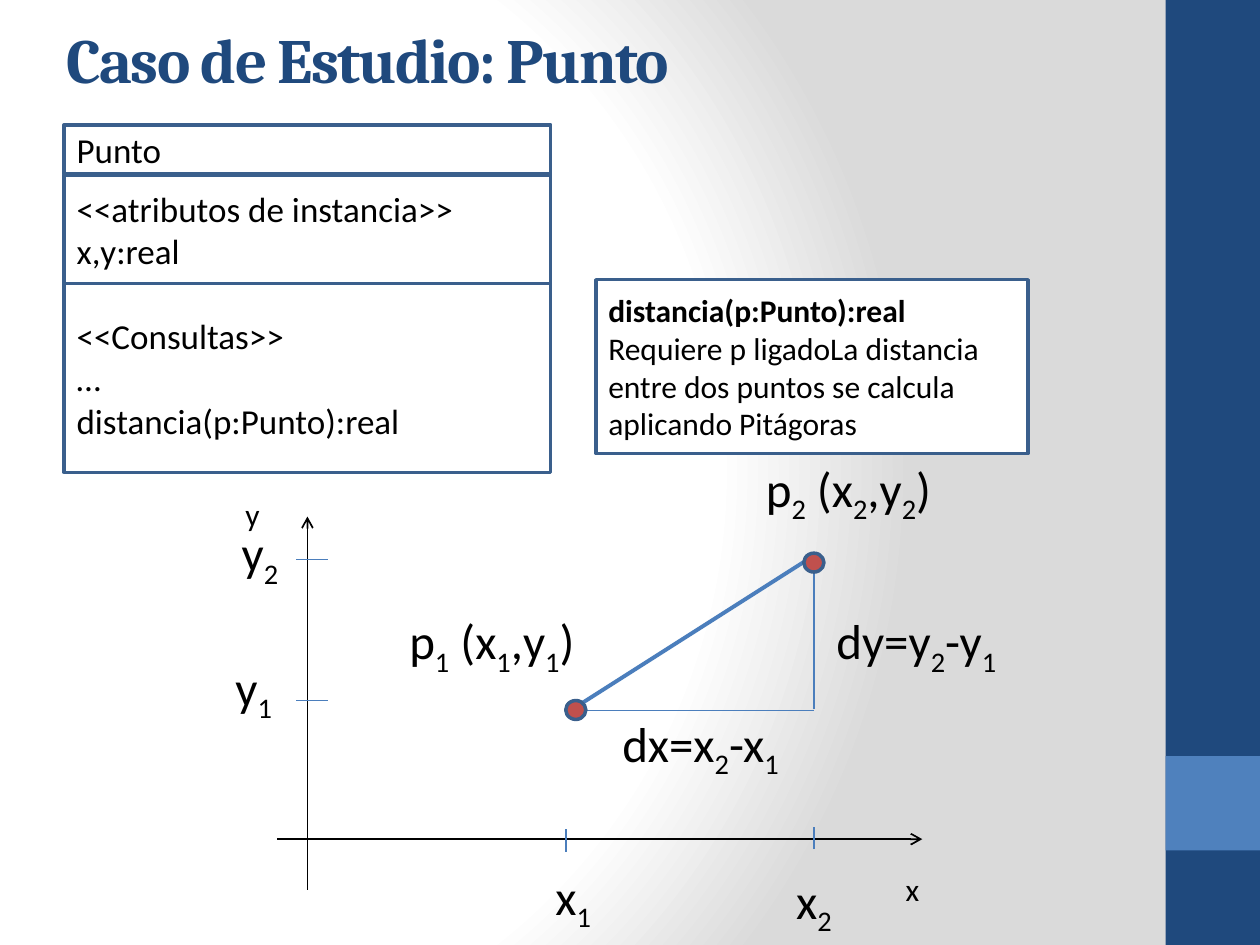
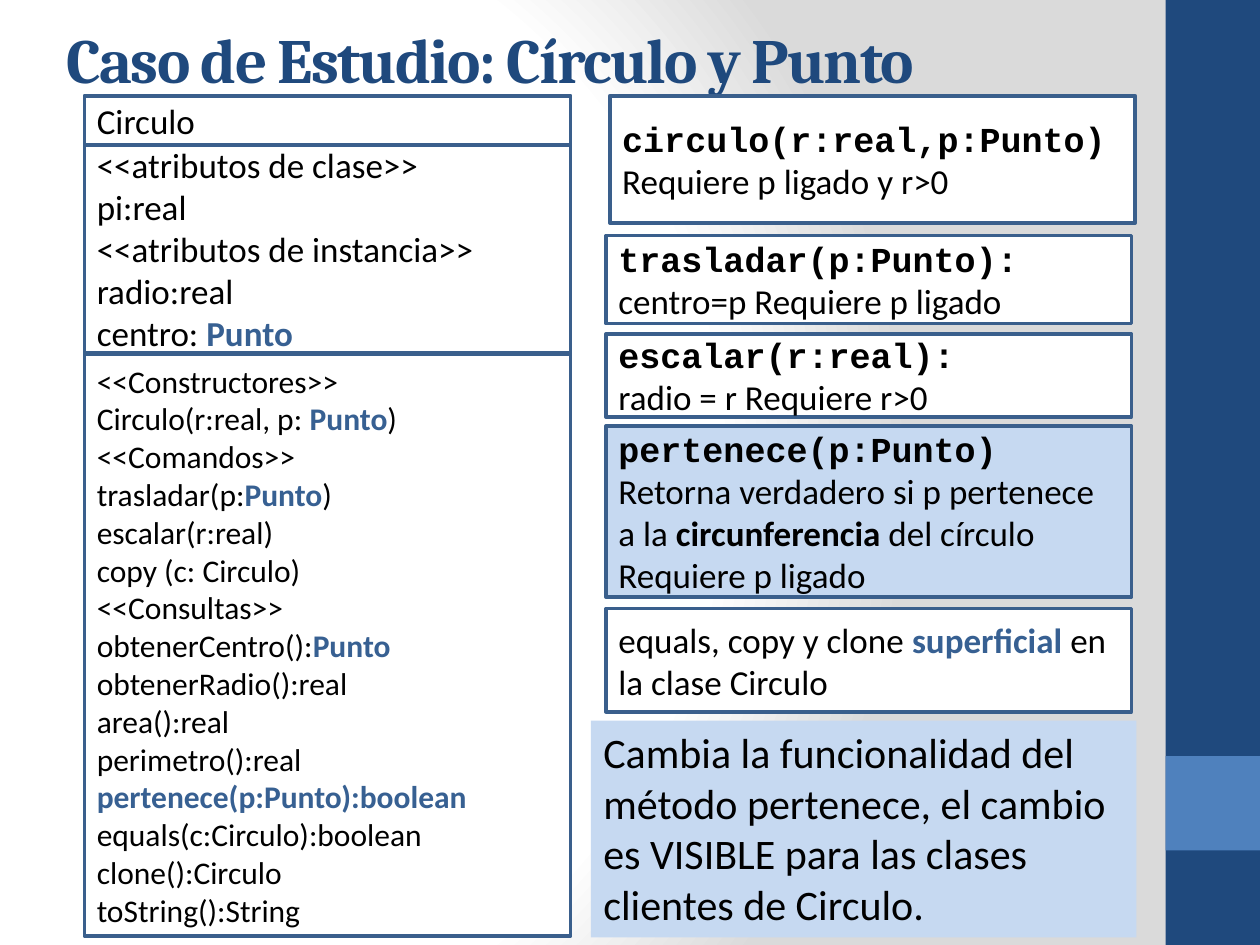
"""Build two slides on the Punto and Circulo case study."""
from itertools import groupby

from pptx import Presentation
from pptx import util as u
from pptx.dml import color
from pptx.enum import shapes, text
from pptx.oxml import parse_xml
from pptx.oxml import ns

NAVY, BLUE, EDGE, LINE = "1F497D", "4F81BD", "3A5F8C", "4B7EBC"
ACCENT, PALE, RED, WHITE, BLACK = "376092", "C6D9F1", "C0504D", "FFFFFF", "000000"
RECT, OVAL = shapes.MSO_SHAPE.RECTANGLE, shapes.MSO_SHAPE.OVAL
MIDDLE, TOP, BOTTOM = text.MSO_ANCHOR.MIDDLE, text.MSO_ANCHOR.TOP, text.MSO_ANCHOR.BOTTOM


def paint(fill, value):
    fill.solid()
    fill.fore_color.rgb = color.RGBColor.from_string(value)


def write(page, place, words, size=20, face="Calibri", ink=BLACK, bold=False, accent=ACCENT,
          heading=None, subscripts=False, tracking=None, before=0, fill=None, edge=None,
          form=RECT, anchor=MIDDLE, grow=False):
    """Add a box; *stars* mark accents, and heading is the typeface of a bold first line."""
    place = [u.Inches(value) for value in place]
    if fill:
        box = page.shapes.add_shape(form, *place)
        box.shadow.inherit = False
        paint(box.fill, fill)
        if edge:
            paint(box.line.fill, edge)
            box.line.width = u.Pt(2)
        else:
            box.line.fill.background()
    else:
        box = page.shapes.add_textbox(*place)
    frame = box.text_frame
    frame.word_wrap = True
    frame.vertical_anchor = anchor
    if grow:
        frame.auto_size = text.MSO_AUTO_SIZE.SHAPE_TO_FIT_TEXT
    for row, line in enumerate(words.split("\n") if words else []):
        para = frame.add_paragraph() if row else frame.paragraphs[0]
        para.alignment = text.PP_ALIGN.LEFT
        para.space_before = u.Pt(before)
        titled = heading and row == 0
        if subscripts:
            pieces = [("".join(group), low) for low, group in groupby(line, str.isdigit)]
        else:
            pieces = [(part, i % 2 == 1) for i, part in enumerate(line.split("*"))]
        for part, marked in pieces:
            if not part:
                continue
            span = para.add_run()
            span.text = part
            strong = marked and not subscripts
            span.font.size = u.Pt(size)
            span.font.name = heading if titled else face
            span.font.bold = bool(bold or titled or strong)
            paint(span.font.fill, accent if strong else ink)
            if marked and subscripts:
                span.font._element.set("baseline", "-25000")
            if tracking:
                span.font._element.set("spc", str(tracking * 100))


deck = Presentation()
deck.slide_width, deck.slide_height = u.Inches(10), u.Inches(7.5)

master = deck.slide_master
master.background.fill.gradient()
gradient = master.element.find(".//" + ns.qn("a:gradFill"))
stops = "".join(f'<a:gs pos="{position}000"><a:srgbClr val="{value}"/></a:gs>'
                for position, value in ((0, WHITE), (75, WHITE), (100, "DADADA")))
gradient.getparent().replace(gradient, parse_xml(
    f'<a:gradFill {ns.nsdecls("a")} rotWithShape="1"><a:gsLst>{stops}</a:gsLst><a:path path="circle">'
    '<a:fillToRect l="20000" t="50000" r="100000" b="50000"/></a:path></a:gradFill>'))

pages = []
for title in ("Caso de Estudio: Punto", "Caso de Estudio: Círculo y Punto"):
    page = deck.slides.add_slide(deck.slide_layouts[6])
    write(page, (9.25, 0, 0.75, 7.5), "", fill=NAVY)
    write(page, (9.25, 6, 0.75, 0.75), "", fill=BLUE)
    write(page, (0.43, 0.05, 8.25, 0.76), title, size=36, face="Cambria", ink=NAVY,
          bold=True, tracking=-1, anchor=BOTTOM)
    pages.append(page)
point_page, circle_page = pages

class_diagrams = [
    (point_page, 0.51, [
        (0.99, 0.39, 20, "Punto"),
        (1.39, 0.87, 20, "<<atributos de instancia>>\nx,y:real"),
        (2.25, 1.5, 20, "<<Consultas>>\n…\ndistancia(p:Punto):real")]),
    (circle_page, 0.67, [
        (0.76, 0.39, 20, "Circulo"),
        (1.15, 1.65, 20, "<<atributos de clase>>\npi:real\n<<atributos de instancia>>\n"
                         "radio:real\ncentro: *Punto*"),
        (2.81, 4.62, 18, "<<Constructores>>\nCirculo(r:real, p: *Punto*)\n<<Comandos>>\n"
                         "trasladar(p:*Punto*)\nescalar(r:real)\ncopy (c: Circulo)\n"
                         "<<Consultas>>\nobtenerCentro():*Punto*\nobtenerRadio():real\n"
                         "area():real\nperimetro():real\n*pertenece(p:Punto):boolean*\n"
                         "equals(c:Circulo):boolean\nclone():Circulo\ntoString():String")]),
]
for page, left, sections in class_diagrams:
    for top, height, size, words in sections:
        write(page, (left, top, 3.86, height), words, size=size, fill=WHITE, edge=EDGE)

y_axis, x_axis = 2.44, 6.66
strokes = [
    (y_axis, 7.06, y_axis, 4.1, BLACK, 1, True),
    (2.2, x_axis, 7.32, x_axis, BLACK, 1, True),
    (4.62, 5.58, 6.38, 4.46, LINE, 2.25, False),
    (4.57, 5.64, 6.46, 5.64, LINE, 1, False),
    (6.46, 5.63, 6.46, 4.39, LINE, 1, False),
    (6.46, 6.74, 6.46, 6.56, LINE, 1, False),
    (4.49, 6.76, 4.49, 6.58, LINE, 1, False),
    (2.35, 4.44, 2.6, 4.44, LINE, 1, False),
    (2.35, 5.56, 2.6, 5.56, LINE, 1, False),
]
for *ends, ink, width, arrow in strokes:
    stroke = point_page.shapes.add_connector(
        shapes.MSO_CONNECTOR.STRAIGHT, *[u.Inches(value) for value in ends])
    paint(stroke.line.fill, ink)
    stroke.line.width = u.Pt(width)
    if arrow:
        stroke.line._get_or_add_ln().append(
            parse_xml(f'<a:tailEnd {ns.nsdecls("a")} type="arrow"/>'))
    stroke._element.spPr.append(parse_xml(f'<a:effectLst {ns.nsdecls("a")}/>'))

for left, top in ((6.38, 4.39), (4.49, 5.56)):
    write(point_page, (left, top, 0.16, 0.15), "", fill=RED, edge=EDGE, form=OVAL)

for left, top, name in ((1.85, 3.88, "y"), (7.09, 6.86, "x")):
    write(point_page, (left, top, 0.47, 0.4), name, size=18, anchor=TOP, grow=True)

formulas = [
    (5.98, 3.59, 2.05, "p2 (x2,y2)"),
    (3.15, 4.8, 2.05, "p1 (x1,y1)"),
    (4.84, 5.61, 2.05, "dx=x2-x1"),
    (6.54, 4.8, 2.24, "dy=y2-y1"),
    (6.22, 6.86, 0.62, "x2"),
    (4.31, 6.83, 0.62, "x1"),
    (1.77, 5.17, 0.62, "y1"),
    (1.82, 4.1, 0.62, "y2"),
]
for left, top, width, formula in formulas:
    write(point_page, (left, top, width, 0.57), formula, size=28, subscripts=True,
          anchor=TOP, grow=True)

write(point_page, (4.73, 2.22, 3.43, 1.38),
      "distancia(p:Punto):real\nRequiere p ligadoLa distancia entre dos puntos se calcula "
      "aplicando Pitágoras", size=18, heading="Calibri", fill=WHITE, edge=EDGE)

write(circle_page, (4.69, 5.72, 4.33, 1.72),
      "Cambia la funcionalidad del método pertenece, el cambio es VISIBLE para las clases "
      "clientes de Circulo.", size=24, before=6, fill=PALE, anchor=TOP, grow=True)
contracts = [
    (4.84, 0.76, 1.01, WHITE, "circulo(r:real,p:Punto)\nRequiere p ligado y r>0"),
    (4.81, 1.87, 0.7, WHITE, "trasladar(p:Punto):\ncentro=p Requiere p ligado"),
    (4.81, 2.65, 0.66, WHITE, "escalar(r:real):\nradio = r Requiere r>0"),
    (4.81, 3.38, 1.36, PALE, "pertenece(p:Punto)\nRetorna verdadero si p pertenece a la "
                             "*circunferencia* del círculo\nRequiere p ligado"),
]
for left, top, height, fill, words in contracts:
    write(circle_page, (left, top, 4.17, height), words, heading="Courier New",
          accent=BLACK, fill=fill, edge=EDGE)
write(circle_page, (4.81, 4.83, 4.17, 0.82),
      "equals, copy y clone *superficial* en la clase Circulo", fill=WHITE, edge=EDGE)

deck.save("out.pptx")
